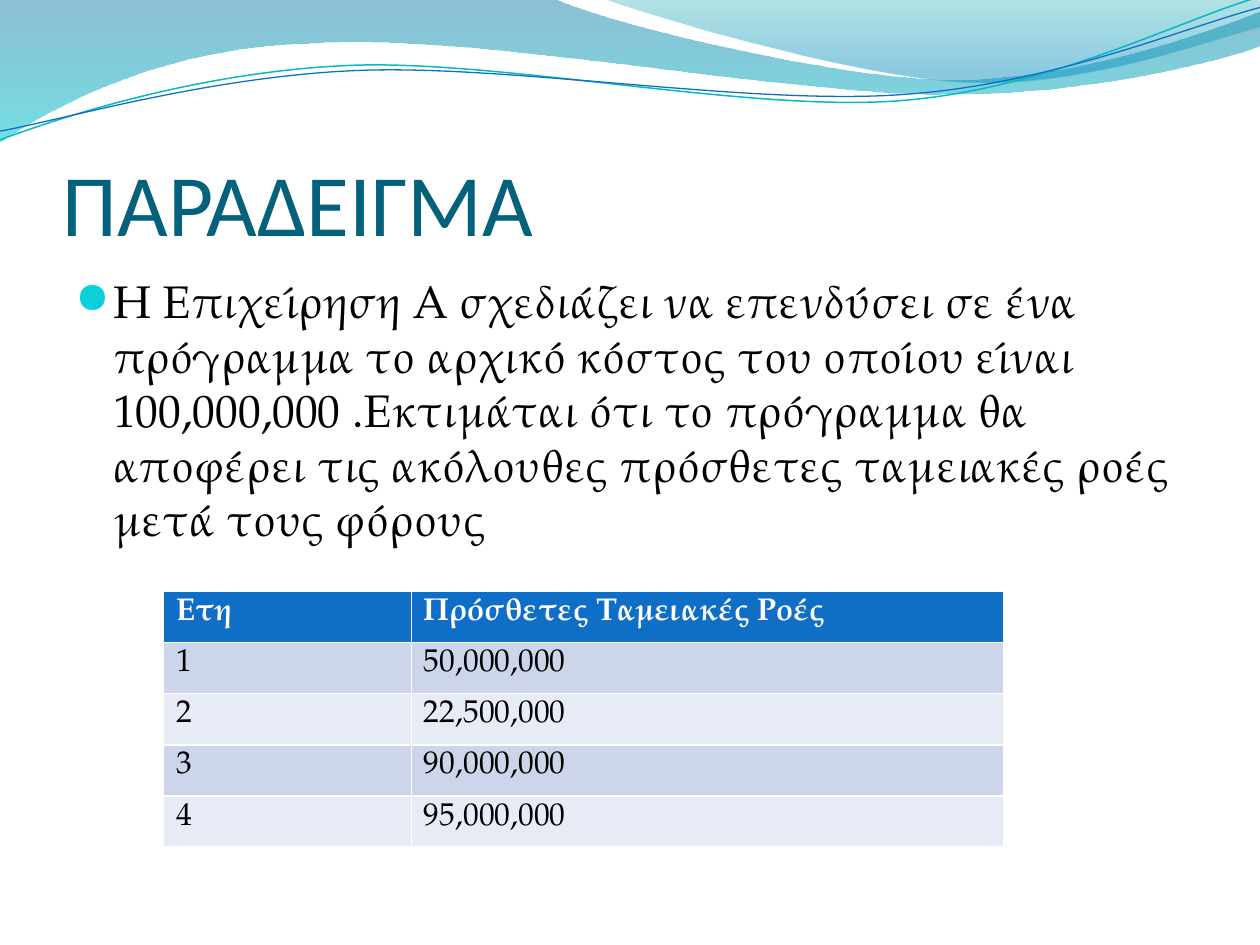
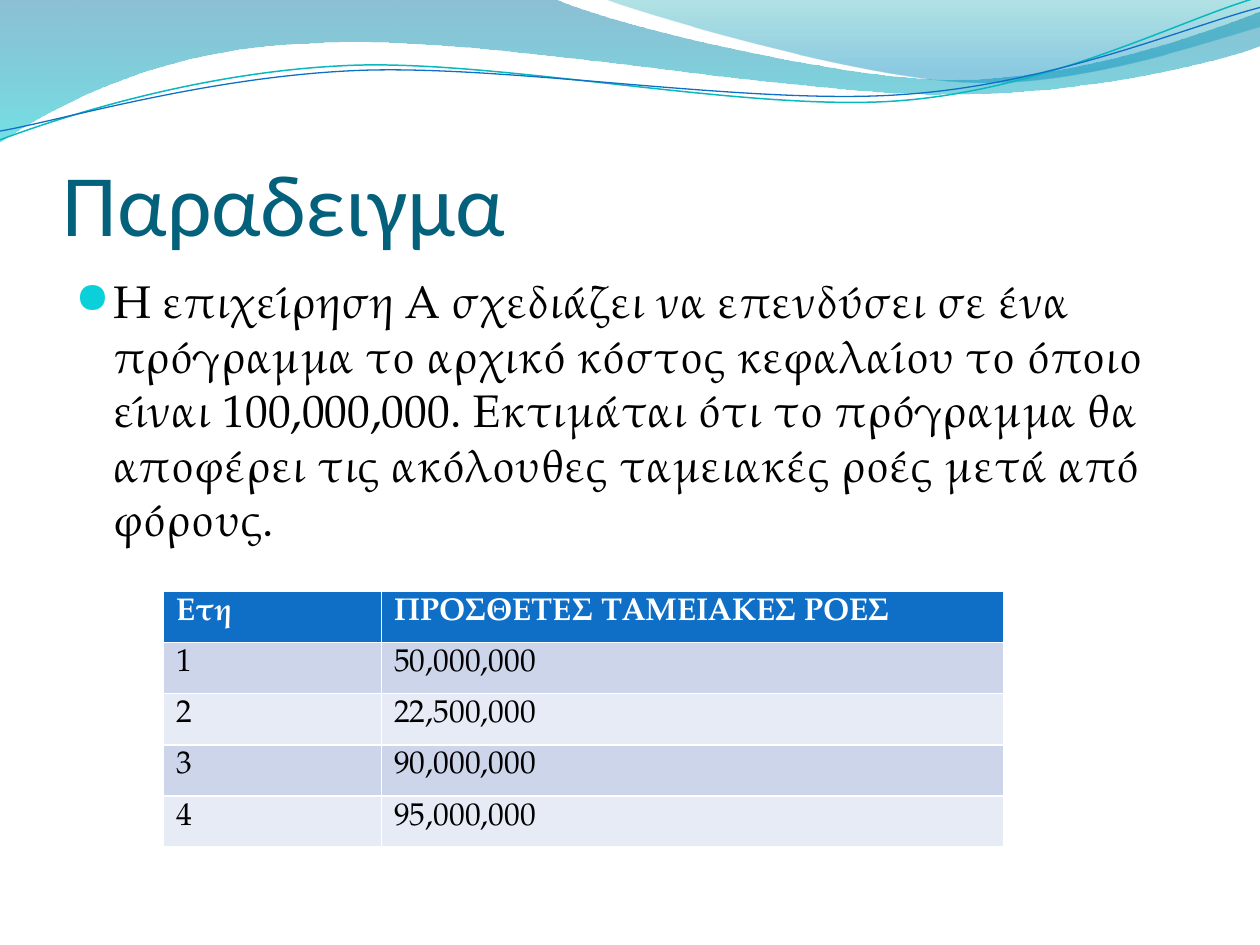
"""Build two slides that state an investment example and list its yearly cash flows."""
from math import cos, radians, sin

from pptx import Presentation
from pptx.dml.color import RGBColor
from pptx.enum.text import MSO_ANCHOR
from pptx.oxml import parse_xml
from pptx.oxml.ns import nsdecls
from pptx.util import Pt

COLORS = {
    "title": "04617B", "text": "000000", "bullet": "0BD0D9", "white": "FFFFFF",
    "header": "0F6FC6", "odd": "CCD5EA", "even": "E7EBF5", "teal": "0AB8BF",
    "wave_top": "0074A1", "wave_end": "00C6CF", "fold_top": "00A1A9", "fold_end": "008BBF",
}
HEADING_FONT, BODY_FONT = "Calibri", "TeX Gyre Pagella"
A = nsdecls("a")
TILT = 357.3

WAVES = [
    {"outline": [(0, 0), (316.8, -0.7),
                 (342.7, 12.2, 478.1, 45.4, 545.8, 45.4),
                 (614.2, 45.4, 689.8, 18.7, 720, 6.5), (720.7, 25.9),
                 (707.8, 31.7, 626.4, 54.7, 537.1, 54),
                 (447.8, 54, 275, 20.2, 185, 24.5),
                 (92.9, 25.9, 33.1, 59.8, -0.7, 81.4), (0, 0)],
     "gradient": [(0, "wave_top", 45), (100, "wave_end", 55)]},
    {"outline": [(344.9, -0.7),
                 (366.5, 7.9, 491, 44.6, 553.7, 46.8),
                 (616.3, 49.7, 691.9, 23, 720, 15.1), (720, 0), (344.9, -0.7)],
     "gradient": [(0, "fold_top", 30), (80, "fold_end", 45)]},
    {"outline": [(0, 79.9),
                 (34.6, 67, 113.8, 41, 199.4, 37.4),
                 (284.4, 33.8, 427, 64.1, 513.4, 57.6),
                 (599.8, 51.1, 675.4, 10.8, 718.6, -1.4)],
     "line": ("teal", 0.85), "pivot": (359.3, 41.4)},
    {"outline": [(0, 74.9),
                 (33.8, 69.1, 118.1, 43.9, 203.8, 40.3),
                 (290.2, 36.7, 429.8, 60.5, 516.2, 54),
                 (601.9, 48.2, 678.2, 15.1, 720, 4.3)],
     "line": ("header", 0.75), "pivot": (359.6, 42.5)},
]

CASH_FLOWS = ["50,000,000", "22,500,000", "90,000,000", "95,000,000"]
EXAMPLES = [
    {"title": "ΠΑΡΑΔΕΙΓΜΑ",
     "statement": "Η Επιχείρηση Α σχεδιάζει να επενδύσει σε ένα πρόγραμμα το αρχικό κόστος "
                  "του οποίου είναι 100,000,000 .Εκτιμάται ότι το πρόγραμμα θα αποφέρει τις "
                  "ακόλουθες πρόσθετες ταμειακές ροές μετά τους φόρους",
     "flows_heading": "Πρόσθετες Ταμειακές Ροές", "years_width": 141.6},
    {"title": "Παραδειγμα",
     "statement": "Η επιχείρηση Α σχεδιάζει να επενδύσει σε ένα πρόγραμμα το αρχικό κόστος "
                  "κεφαλαίου το όποιο είναι 100,000,000. Εκτιμάται ότι το πρόγραμμα θα "
                  "αποφέρει τις ακόλουθες ταμειακές ροές μετά από φόρους.",
     "flows_heading": "ΠΡΟΣΘΕΤΕΣ ΤΑΜΕΙΑΚΕΣ ΡΟΕΣ", "years_width": 124.6},
]
TABLE_WIDTH, ROW_HEIGHT = 480, 29.2


def write(frame, text, size=18, font=BODY_FONT, color="text", bold=False):
    frame.word_wrap = True
    paragraph = frame.paragraphs[0]
    run = paragraph.add_run()
    run.text = text
    run.font.size, run.font.name, run.font.bold = Pt(size), font, bold
    run.font.color.rgb = RGBColor.from_string(COLORS[color])
    return paragraph


def draw_curves(shapes, outline, pivot=None):
    points = [step[i:i + 2] for step in outline for i in range(0, len(step), 2)]
    if pivot:
        px, py = pivot
        c, s = cos(radians(-TILT)), sin(radians(-TILT))
        points = [(px + (x - px) * c - (y - py) * s, py + (x - px) * s + (y - py) * c)
                  for x, y in points]
    start, *rest = [(Pt(x), Pt(y)) for x, y in points]
    builder = shapes.build_freeform(*start)
    builder.add_line_segments(rest, close=pivot is None)
    ribbon = builder.convert_to_shape()
    segments = iter(ribbon._element.findall(".//{*}lnTo"))
    for step in outline[1:]:
        first = next(segments)
        if len(step) == 6:
            curve = parse_xml(f"<a:cubicBezTo {A}/>")
            first.addprevious(curve)
            for segment in (first, next(segments), next(segments)):
                curve.append(segment[0])
                segment.getparent().remove(segment)
    if pivot:
        ribbon.rotation = TILT
    return ribbon


deck = Presentation()
deck.slide_width, deck.slide_height = Pt(720), Pt(540)

for example in EXAMPLES:
    slide = deck.slides.add_slide(deck.slide_layouts[6])

    for wave in WAVES:
        ribbon = draw_curves(slide.shapes, wave["outline"], pivot=wave.get("pivot"))
        ribbon.shadow.inherit = False
        ribbon.fill.background()
        if "gradient" in wave:
            ribbon.line.fill.background()
            stops = "".join(
                f'<a:gs pos="{pos * 1000}"><a:srgbClr val="{COLORS[color]}">'
                f'<a:alpha val="{alpha * 1000}"/></a:srgbClr></a:gs>'
                for pos, color, alpha in wave["gradient"])
            properties = ribbon.fill._xPr
            properties.replace(properties.find("{*}noFill"), parse_xml(
                f'<a:gradFill {A} rotWithShape="1"><a:gsLst>{stops}</a:gsLst>'
                '<a:lin ang="5400000" scaled="0"/></a:gradFill>'))
        else:
            color, width = wave["line"]
            ribbon.line.color.rgb = RGBColor.from_string(COLORS[color])
            ribbon.line.width = Pt(width)

    title = slide.shapes.add_textbox(Pt(36), Pt(55.4), Pt(648), Pt(90)).text_frame
    title.vertical_anchor = MSO_ANCHOR.BOTTOM
    title.margin_left = title.margin_right = title.margin_bottom = 0
    write(title, example["title"], size=50, font=HEADING_FONT, color="title")

    body = slide.shapes.add_textbox(Pt(36), Pt(152.6), Pt(648), Pt(345.6)).text_frame
    statement = write(body, example["statement"], size=26)
    indent = statement._p.get_or_add_pPr()
    indent.set("marL", str(Pt(21.6)))
    indent.set("indent", str(Pt(-21.6)))
    for rule in (f'<a:spcBef {A}><a:spcPct val="20000"/></a:spcBef>',
                 f'<a:buClr {A}><a:srgbClr val="{COLORS["bullet"]}"/></a:buClr>',
                 f'<a:buSzPct {A} val="95000"/>',
                 f'<a:buFont {A} typeface="OpenSymbol"/>',
                 f'<a:buChar {A} char="●"/>'):
        indent.append(parse_xml(rule))

    rows = [("Ετη", example["flows_heading"])]
    rows += [(str(year), flow) for year, flow in enumerate(CASH_FLOWS, 1)]
    flows = slide.shapes.add_table(len(rows), 2, Pt(93.5), Pt(338), Pt(TABLE_WIDTH),
                                   Pt(ROW_HEIGHT * len(rows))).table
    flows.columns[0].width = Pt(example["years_width"])
    flows.columns[1].width = Pt(TABLE_WIDTH - example["years_width"])
    for r, row in enumerate(rows):
        flows.rows[r].height = Pt(ROW_HEIGHT)
        band = "header" if r == 0 else "odd" if r % 2 else "even"
        for c, text in enumerate(row):
            cell = flows.cell(r, c)
            cell.fill.solid()
            cell.fill.fore_color.rgb = RGBColor.from_string(COLORS[band])
            write(cell.text_frame, text, color="white" if r == 0 else "text", bold=r == 0)

deck.save("out.pptx")
